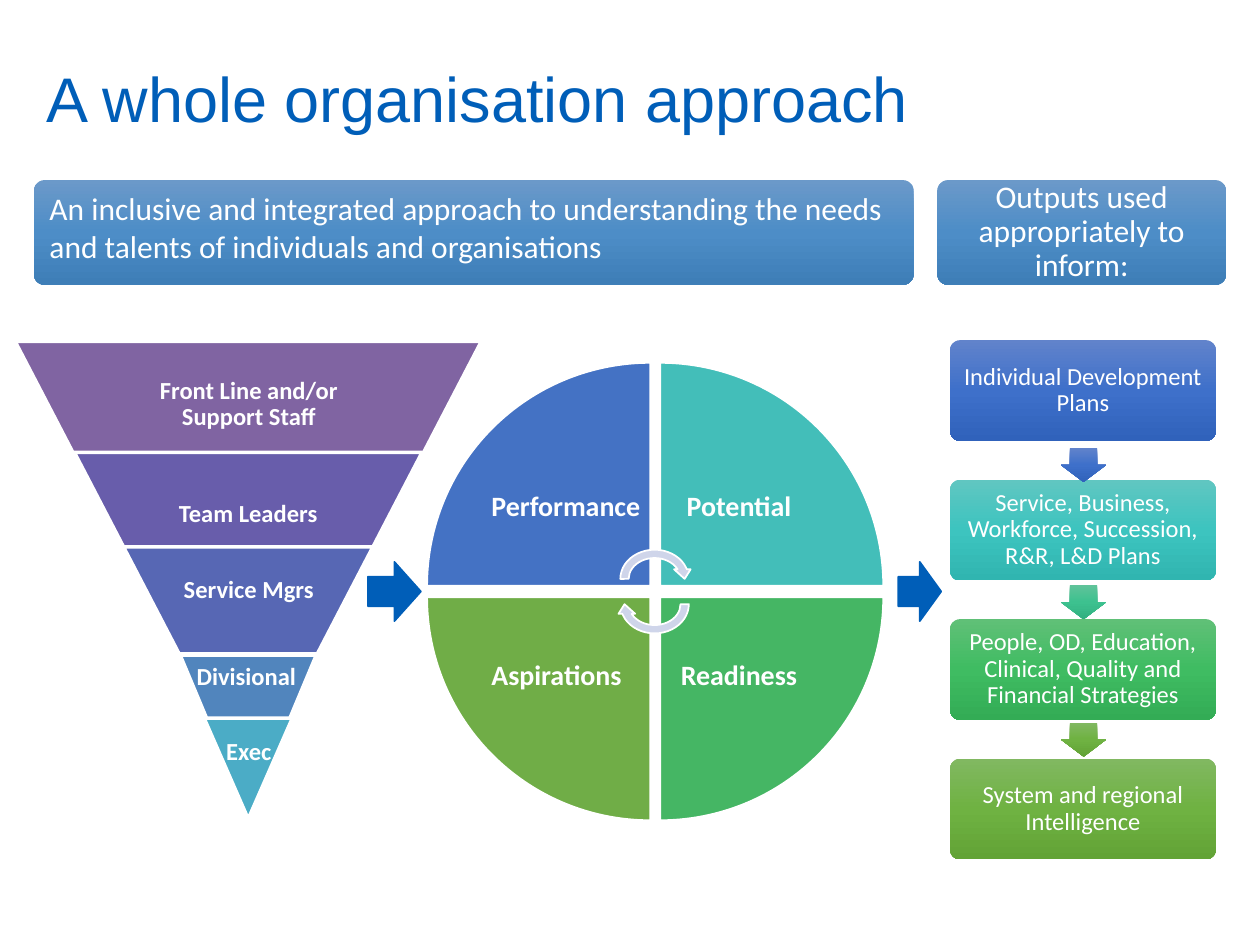
"""Draw the slide on a whole organisation approach."""
from copy import deepcopy
from dataclasses import dataclass
from typing import NamedTuple

from pptx import Presentation
from pptx.dml.color import RGBColor as Rgb
from pptx.enum.shapes import MSO_SHAPE as Kind
from pptx.enum.text import MSO_ANCHOR as Anchor, MSO_AUTO_SIZE as Fit, PP_ALIGN as Align
from pptx.oxml.ns import qn
from pptx.util import Inches, Pt

COLS, ROWS = 100, 75
WIDE, HIGH = Inches(10), Inches(7.5)


@dataclass(frozen=True)
class Theme:
    head: str = "Arial"
    body: str = "Calibri"
    blue: str = "005EB8"
    white: str = "FFFFFF"
    pale: str = "CFD5EA"
    steel: tuple = ("6B99C9", "4D8DC7", "3E7EB7")
    royal: tuple = ("6183CB", "3E70CA", "3062BB")
    teal: tuple = ("60C6C1", "3DC4BF", "30B5B0")
    mint: tuple = ("60C39A", "3DC18F", "31B080")
    green: tuple = ("60C077", "3FBC62", "33AC55")
    leaf: tuple = ("81B861", "6FB242", "62A336")
    title: int = 36
    large: int = 18
    mid: int = 16
    small: int = 14


class Box(NamedTuple):
    col: float
    row: float
    wide: float
    high: float

    def place(self) -> tuple:
        return (int(WIDE * self.col / COLS), int(HIGH * self.row / ROWS),
                int(WIDE * self.wide / COLS), int(HIGH * self.high / ROWS))


class Wedge(NamedTuple):
    text: str
    fill: str
    turn: int
    right: bool
    low: bool
    align: Align


class Band(NamedTuple):
    box: Box
    fill: str


class Label(NamedTuple):
    text: str
    box: Box


class Card(NamedTuple):
    text: str
    fill: tuple


LOOK = Theme()
BANDS = (
    Band(Box(1.2, 27.1, 37, 8.9), "8064A2"),
    Band(Box(5.9, 35.9, 27.6, 8.6), "685DAB"),
    Band(Box(9.8, 43.4, 19.8, 8.5), "5767B4"),
    Band(Box(14.3, 52, 10.8, 12.9), "5185BD"),
    Band(Box(16.2, 57, 7, 8), "4BACC6"),
)
LABELS = (
    Label("Front Line and/or Support Staff", Box(10.8, 28.2, 17.9, 7.8)),
    Label("Team Leaders", Box(13.7, 37.2, 12, 7.2)),
    Label("Service Mgrs", Box(13.6, 45.2, 12.3, 3.4)),
    Label("Divisional", Box(14.3, 52.1, 10.5, 3.4)),
    Label("Exec", Box(16.3, 58, 6.9, 3.4)),
)
WEDGES = (
    Wedge("Performance", "4472C4", 0, False, False, Align.LEFT),
    Wedge("Potential", "43BEB9", 90, True, False, Align.CENTER),
    Wedge("Readiness", "45B664", 180, True, True, Align.CENTER),
    Wedge("Aspirations", "70AD47", 270, False, True, Align.LEFT),
)
CARDS = (
    Card("Individual Development Plans", LOOK.royal),
    Card("Service, Business, Workforce, Succession, R&R, L&D Plans", LOOK.teal),
    Card("People, OD, Education, Clinical, Quality and Financial Strategies", LOOK.green),
    Card("System and regional Intelligence", LOOK.leaf),
)


def put(shape, text: str, *, size: int, font: str = LOOK.body, color: str = LOOK.white,
        bold: bool = False, align: Align = Align.CENTER, anchor: Anchor = Anchor.MIDDLE,
        pad: tuple = (0.1, 0.05), gap: float = 0.9) -> None:
    frame = shape.text_frame
    frame.word_wrap, frame.auto_size = True, Fit.NONE
    frame.vertical_anchor = anchor
    frame.margin_left = frame.margin_right = Inches(pad[0])
    frame.margin_top = frame.margin_bottom = Inches(pad[1])
    para = frame.paragraphs[0]
    para.alignment, para.line_spacing = align, gap
    run = para.add_run()
    run.text = text
    run.font.name, run.font.size, run.font.bold = font, Pt(size), bold
    run.font.color.rgb = Rgb.from_string(color)


def blend(fill, shape, tones: tuple) -> None:
    fill.gradient()
    fill.gradient_angle = 270
    stops = shape.element.spPr.find(qn("a:gradFill")).find(qn("a:gsLst"))
    stops.append(deepcopy(stops[-1]))
    for i, (stop, tone) in enumerate(zip(fill.gradient_stops, tones)):
        stop.position = i / 2
        stop.color.rgb = Rgb.from_string(tone)


def draw(slide, kind: Kind, box: Box, fill: str | tuple, *, line: str = "",
         width: float = 1, turn: int = 0, bends: tuple = ()):
    shape = slide.shapes.add_shape(kind, *box.place())
    shape.shadow.inherit = False
    shape.rotation = turn
    for i, bend in enumerate(bends):
        shape.adjustments[i] = bend
    if isinstance(fill, tuple):
        blend(shape.fill, shape, fill)
    else:
        shape.fill.solid()
        shape.fill.fore_color.rgb = Rgb.from_string(fill)
    if line:
        shape.line.color.rgb = Rgb.from_string(line)
        shape.line.width = Pt(width)
    else:
        shape.line.fill.background()
    return shape


def panel(slide, box: Box, fill: tuple, text: str, **form) -> None:
    put(draw(slide, Kind.ROUNDED_RECTANGLE, box, fill, bends=(0.1,)), text, **form)


def label(slide, box: Box, text: str, **form) -> None:
    put(slide.shapes.add_textbox(*box.place()), text, bold=True, **form)


def wheel(slide) -> None:
    for part in WEDGES:
        row = 47.4 if part.low else 28.8
        box = Box(52.4 if part.right else 33.9, row, 17.7, 17.7)
        draw(slide, Kind.PIE_WEDGE, box, part.fill, line=LOOK.white, turn=part.turn)
        spot = Box(52.4 if part.right else 39, 47.4 if part.low else 34, 12.5, 12.5)
        label(slide, spot, part.text, size=LOOK.mid, align=part.align, pad=(0, 0.12))
    for row, turn in ((43.3, 0), (45.3, 180)):
        draw(slide, Kind.CIRCULAR_ARROW, Box(48.9, row, 6.1, 5.3), LOOK.pale,
             line=LOOK.white, turn=turn)


def chain(slide) -> None:
    for i, card in enumerate(CARDS):
        panel(slide, Box(75.4, 27 + 11.07 * i, 21.1, 8), card.fill, card.text,
              size=LOOK.small, pad=(0.04, 0.04))
    for i, fill in enumerate((LOOK.royal, LOOK.mint, LOOK.leaf)):
        draw(slide, Kind.DOWN_ARROW, Box(84.2, 35.55 + 10.9 * i, 3.6, 2.7), fill,
             bends=(0.6, 0.5))


def funnel(slide) -> None:
    for band in BANDS:
        draw(slide, Kind.TRAPEZOID, band.box, band.fill, line=LOOK.white, width=2,
             turn=180, bends=(0.52,))
    for item in LABELS:
        label(slide, item.box, item.text, size=LOOK.small, pad=(0.02, 0.02))


def main() -> None:
    deck = Presentation()
    deck.slide_width, deck.slide_height = WIDE, HIGH
    slide = deck.slides.add_slide(deck.slide_layouts[5])
    title = slide.shapes.title
    title.left, title.top, title.width, title.height = Box(2.7, 3, 90.7, 9.4).place()
    put(title, "A whole organisation approach", size=LOOK.title, font=LOOK.head,
        color=LOOK.blue, align=Align.LEFT, gap=1)
    panel(slide, Box(2.7, 14.3, 69.8, 8.3), LOOK.steel,
          "An inclusive and integrated approach to understanding the needs "
          "and talents of individuals and organisations",
          size=LOOK.large, align=Align.LEFT, anchor=Anchor.TOP, gap=1)
    panel(slide, Box(74.4, 14.3, 22.9, 8.3), LOOK.steel,
          "Outputs used appropriately to inform:", size=LOOK.large, pad=(0.04, 0.04))
    wheel(slide)
    chain(slide)
    for col, wide in ((29.2, 4.2), (71.3, 3.4)):
        draw(slide, Kind.RIGHT_ARROW, Box(col, 44.6, wide, 4.7), LOOK.blue, line=LOOK.blue)
    funnel(slide)
    deck.save("out.pptx")


if __name__ == "__main__":
    main()
